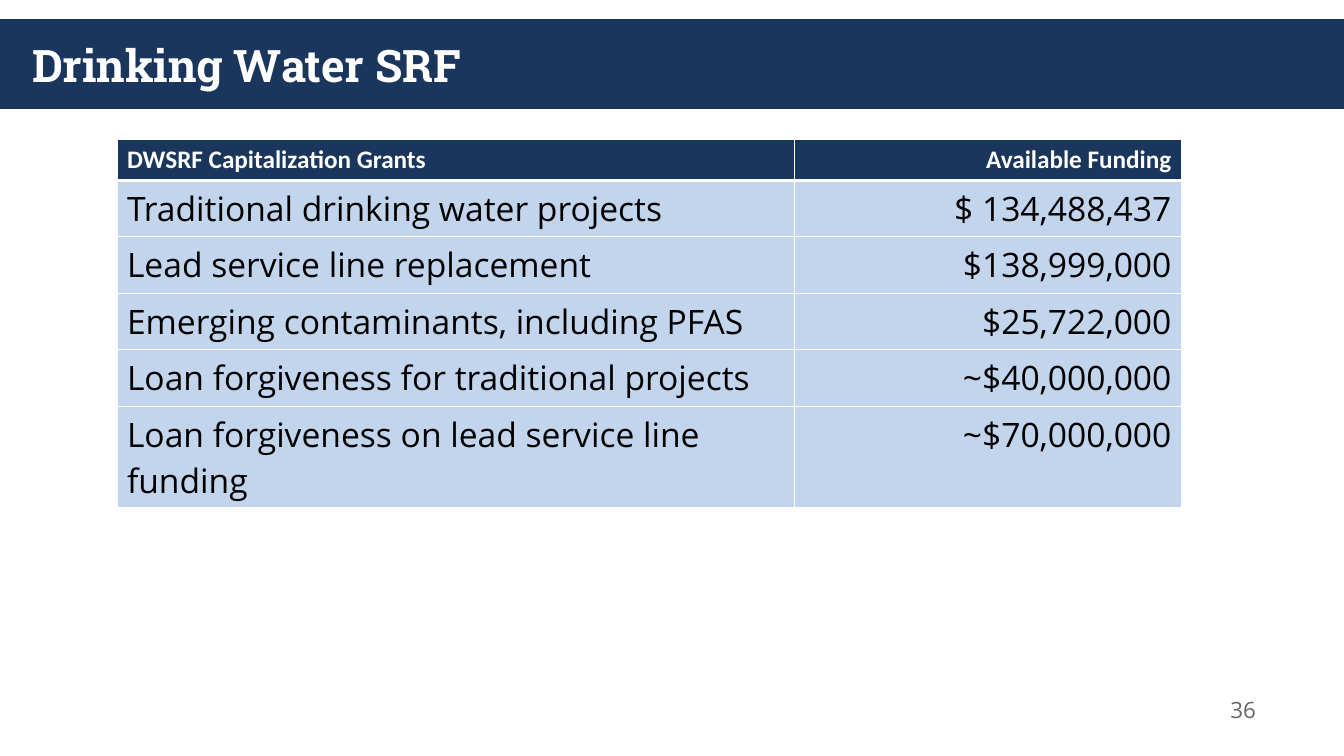
import pptx
import pptx.dml.color
import pptx.enum.shapes
import pptx.enum.text
import pptx.oxml
import pptx.oxml.ns
import pptx.util

Inches = pptx.util.Inches
Pt = pptx.util.Pt
RGBColor = pptx.dml.color.RGBColor
Align = pptx.enum.text.PP_ALIGN
Anchor = pptx.enum.text.MSO_ANCHOR

NAVY = RGBColor(0x1B, 0x36, 0x5D)
PALE_BLUE = RGBColor(0xC3, 0xD4, 0xED)
WHITE = RGBColor(0xFF, 0xFF, 0xFF)
BLACK = RGBColor(0, 0, 0)
GRAY = RGBColor(0x66, 0x66, 0x66)

TITLE = {"name": "Roboto Slab", "size": Pt(32), "bold": True, "color": WHITE}
HEADER = {"name": "Calibri", "size": Pt(18), "bold": True, "color": WHITE}
BODY = {"name": "Open Sans", "size": Pt(24), "bold": False, "color": BLACK}
NUMBER = {"name": "Open Sans", "size": Pt(16), "bold": False, "color": GRAY}

FUNDING = [
    ("DWSRF Capitalization Grants", "Available Funding"),
    ("Traditional drinking water projects", "$ 134,488,437"),
    ("Lead service line replacement", "$138,999,000"),
    ("Emerging contaminants, including PFAS", "$25,722,000"),
    ("Loan forgiveness for traditional projects", "~$40,000,000"),
    ("Loan forgiveness on lead service line funding", "~$70,000,000"),
]
COLUMN_WIDTHS = (6.72, 3.84)
HEADER_HEIGHT, LINE_HEIGHT, TWO_LINE_HEIGHT = 0.41, 0.56, 1.01
ROW_HEIGHTS = [HEADER_HEIGHT] + [LINE_HEIGHT] * 4 + [TWO_LINE_HEIGHT]


def write(frame, text, style, align):
    para = frame.paragraphs[0]
    para.alignment = align
    span = para.add_run()
    span.text = text
    for name, value in style.items():
        if name == "color":
            span.font.color.rgb = value
        else:
            setattr(span.font, name, value)


def add_text(page, box, text, style, align):
    frame = page.shapes.add_textbox(*map(Inches, box)).text_frame
    frame.word_wrap = True
    frame.vertical_anchor = Anchor.MIDDLE
    write(frame, text, style, align)


def add_title_band(page, box, text):
    left, top, width, height = box
    band = page.shapes.add_shape(
        pptx.enum.shapes.MSO_SHAPE.RECTANGLE, *map(Inches, box))
    band.shadow.inherit = False
    band.fill.solid()
    band.fill.fore_color.rgb = NAVY
    band.line.fill.background()
    add_text(page, (left + 0.22, top, width - 0.44, height + 0.02),
             text, TITLE, Align.LEFT)


def set_borders(cell, top_points, bottom_points):
    """Draw white borders, one point wide at the sides."""
    properties = cell._tc.get_or_add_tcPr()
    sides = {"lnL": 1, "lnR": 1, "lnT": top_points, "lnB": bottom_points}
    for position, (side, points) in enumerate(sides.items()):
        properties.insert(position, pptx.oxml.parse_xml(
            f'<a:{side} {pptx.oxml.ns.nsdecls("a")} w="{Pt(points)}">'
            f'<a:solidFill><a:srgbClr val="{WHITE}"/></a:solidFill></a:{side}>'))


def add_funding_table(page, left, top):
    box = (left, top, sum(COLUMN_WIDTHS), sum(ROW_HEIGHTS))
    table = page.shapes.add_table(
        len(FUNDING), len(COLUMN_WIDTHS), *map(Inches, box)).table
    for column, width in zip(table.columns, COLUMN_WIDTHS):
        column.width = Inches(width)
    for index, (row, height, texts) in enumerate(
            zip(table.rows, ROW_HEIGHTS, FUNDING)):
        row.height = Inches(height)
        is_header = index == 0
        for cell, text, align in zip(row.cells, texts, (Align.LEFT, Align.RIGHT)):
            cell.fill.solid()
            cell.fill.fore_color.rgb = NAVY if is_header else PALE_BLUE
            set_borders(cell, 3 if index == 1 else 1, 3 if is_header else 1)
            write(cell.text_frame, text, HEADER if is_header else BODY, align)


def main():
    deck = pptx.Presentation()
    deck.slide_width = Inches(13.33)
    deck.slide_height = Inches(7.5)
    page = deck.slides.add_slide(deck.slide_layouts[6])
    add_title_band(page, (0, 0.19, 13.33, 0.89), "Drinking Water SRF")
    add_funding_table(page, 1.16, 1.38)
    add_text(page, (12, 6.83, 0.66, 0.42), "36", NUMBER, Align.CENTER)
    deck.save("out.pptx")


if __name__ == "__main__":
    main()
